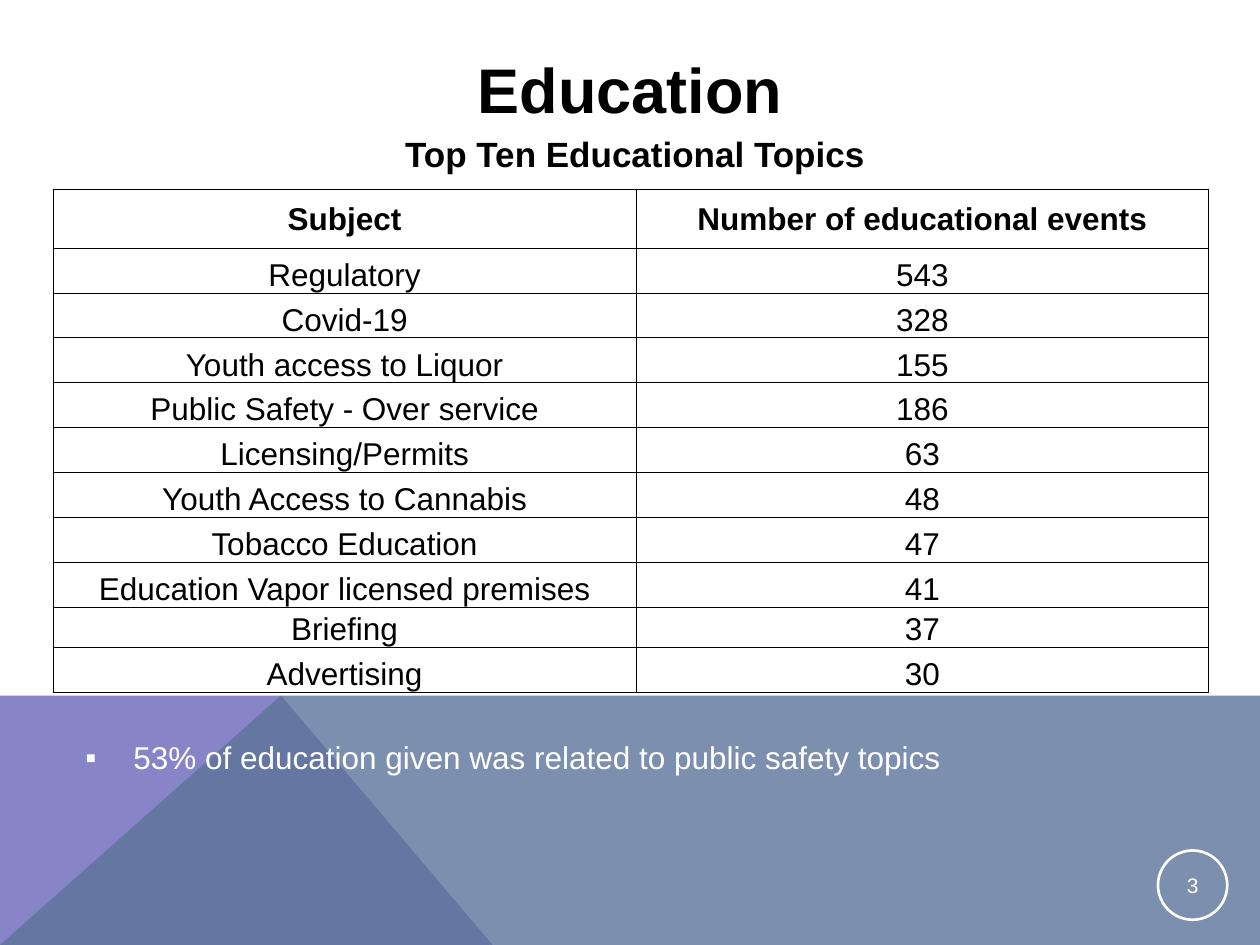
from lxml.etree import SubElement
from pptx import Presentation
from pptx.dml.color import RGBColor
from pptx.enum.shapes import MSO_SHAPE
from pptx.enum.text import MSO_ANCHOR, PP_ALIGN
from pptx.oxml.ns import qn
from pptx.util import Inches, Pt

BLACK = RGBColor(0x00, 0x00, 0x00)
WHITE = RGBColor(0xFF, 0xFF, 0xFF)
PURPLE = RGBColor(0x87, 0x84, 0xC7)
SLATE = RGBColor(0x5D, 0x73, 0x9A)
FONT = "Arial"

HEADER = ("Subject", "Number of educational events")
TOPICS = [
    ("Regulatory", 543),
    ("Covid-19", 328),
    ("Youth access to Liquor", 155),
    ("Public Safety - Over service", 186),
    ("Licensing/Permits", 63),
    ("Youth Access to Cannabis", 48),
    ("Tobacco Education", 47),
    ("Education Vapor licensed premises", 41),
    ("Briefing", 37),
    ("Advertising", 30),
]
COLUMN_WIDTHS = (4.63, 4.54)
HEADER_HEIGHT, ROW_HEIGHT, BRIEFING_HEIGHT = 0.47, 0.356, 0.32


def inches(*lengths):
    return [Inches(length) for length in lengths]


def format_paragraph(paragraph, size, color, bold=False, align=PP_ALIGN.CENTER):
    paragraph.alignment = align
    font = paragraph.font
    font.name, font.size, font.bold = FONT, Pt(size), bold
    font.color.rgb = color


def set_margins(target, left, top, right, bottom):
    target.margin_left, target.margin_top = Inches(left), Inches(top)
    target.margin_right, target.margin_bottom = Inches(right), Inches(bottom)


def add_polygon(slide, points, color, opacity=100):
    start, *others = [inches(*point) for point in points]
    builder = slide.shapes.build_freeform(*start)
    builder.add_line_segments(others, close=True)
    shape = builder.convert_to_shape()
    shape.shadow.inherit = False
    shape.fill.solid()
    shape.fill.fore_color.rgb = color
    shape.line.fill.background()
    if opacity < 100:
        color_element = shape.fill._xPr.find(".//" + qn("a:srgbClr"))
        SubElement(color_element, qn("a:alpha"), val=str(opacity * 1000))


def add_footer_band(slide, left, top, width, height):
    """Purple wedge under a translucent slate sheet, meeting at a peak."""
    right, bottom = left + width, top + height
    peak = (left + 2.23, top)
    add_polygon(slide, [(left, bottom), (left, top), peak,
                        (left + 3.91, bottom)], PURPLE)
    add_polygon(slide, [(left, bottom), peak, (right, top),
                        (right, bottom)], SLATE, opacity=80)


def place_title(slide, left, top, width, height):
    title = slide.shapes.title
    title.left, title.top, title.width, title.height = inches(
        left, top, width, height)
    frame = title.text_frame
    frame.text = "Education"
    frame.vertical_anchor = MSO_ANCHOR.MIDDLE
    format_paragraph(frame.paragraphs[0], 36, BLACK, bold=True)


def add_text(slide, box, text):
    frame = slide.shapes.add_textbox(*inches(*box)).text_frame
    frame.word_wrap = True
    frame.text = text
    return frame.paragraphs[0]


def add_subtitle(slide, *box):
    paragraph = add_text(slide, box, "Top Ten Educational Topics")
    format_paragraph(paragraph, 20, BLACK, bold=True)


def add_finding(slide, *box):
    paragraph = add_text(
        slide, box, "53% of education given was related to public safety topics")
    properties = paragraph._p.get_or_add_pPr()
    properties.set("marL", str(Inches(0.38)))
    properties.set("indent", str(-Inches(0.38)))
    SubElement(properties, qn("a:buFont"), typeface=FONT)
    SubElement(properties, qn("a:buChar"), char="▪")
    format_paragraph(paragraph, 18, WHITE, align=PP_ALIGN.LEFT)


def add_cell_borders(cell):
    properties = cell._tc.get_or_add_tcPr()
    for side in ("lnL", "lnR", "lnT", "lnB"):
        line = SubElement(properties, qn("a:" + side), w=str(Pt(0.5)))
        fill = SubElement(line, qn("a:solidFill"))
        SubElement(fill, qn("a:srgbClr"), val=str(BLACK))


def fill_cell(cell, text, is_header):
    add_cell_borders(cell)
    cell.fill.solid()
    cell.fill.fore_color.rgb = WHITE
    set_margins(cell, 0.01, 0.01, 0.01, 0)
    cell.vertical_anchor = MSO_ANCHOR.MIDDLE if is_header else MSO_ANCHOR.BOTTOM
    cell.text = str(text)
    format_paragraph(cell.text_frame.paragraphs[0], 18, BLACK, bold=is_header)


def add_topics_table(slide, left, top, width, height):
    rows = [HEADER, *TOPICS]
    table = slide.shapes.add_table(
        len(rows), len(HEADER), *inches(left, top, width, height)).table
    for column, column_width in zip(table.columns, COLUMN_WIDTHS):
        column.width = Inches(column_width)
    special_heights = {"Subject": HEADER_HEIGHT, "Briefing": BRIEFING_HEIGHT}
    for row_index, values in enumerate(rows):
        table.rows[row_index].height = Inches(
            special_heights.get(values[0], ROW_HEIGHT))
        for column_index, value in enumerate(values):
            fill_cell(table.cell(row_index, column_index), value, row_index == 0)


def add_page_number(slide, *box):
    circle = slide.shapes.add_shape(MSO_SHAPE.OVAL, *inches(*box))
    circle.shadow.inherit = False
    circle.fill.background()
    circle.line.color.rgb = WHITE
    circle.line.width = Pt(1.5)
    frame = circle.text_frame
    set_margins(frame, 0.01, 0.01, 0.01, 0.01)
    frame.vertical_anchor = MSO_ANCHOR.MIDDLE
    frame.text = "3"
    format_paragraph(frame.paragraphs[0], 12, WHITE)


def main():
    presentation = Presentation()
    presentation.slide_width, presentation.slide_height = inches(10, 7.5)
    slide = presentation.slides.add_slide(presentation.slide_layouts[5])
    add_footer_band(slide, 0, 5.52, 10, 1.98)
    place_title(slide, 0.5, 0.4, 9, 0.6)
    add_page_number(slide, 9.19, 6.75, 0.55, 0.55)
    add_topics_table(slide, 0.42, 1.5, 9.17, 4)
    add_subtitle(slide, 1.5, 1, 7.08, 0.44)
    add_finding(slide, 0.58, 5.81, 8.34, 0.4)
    presentation.save("out.pptx")


if __name__ == "__main__":
    main()
